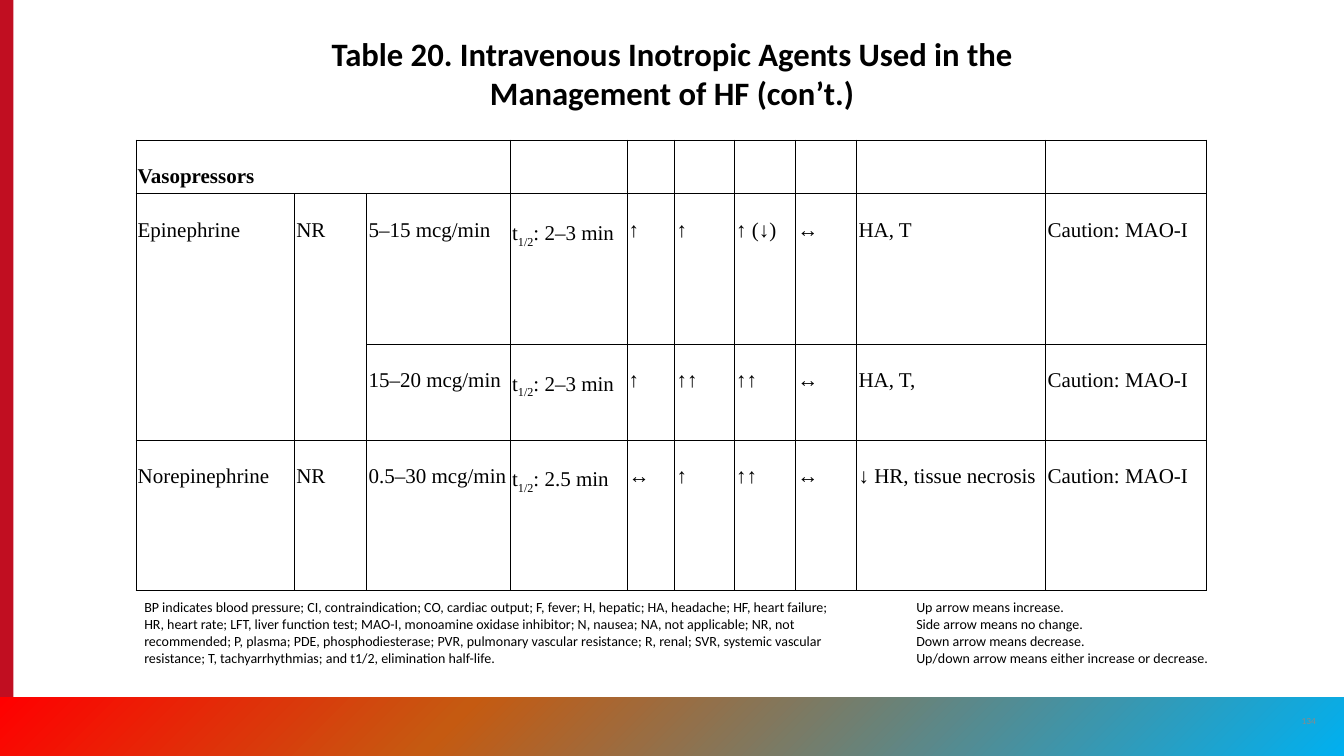
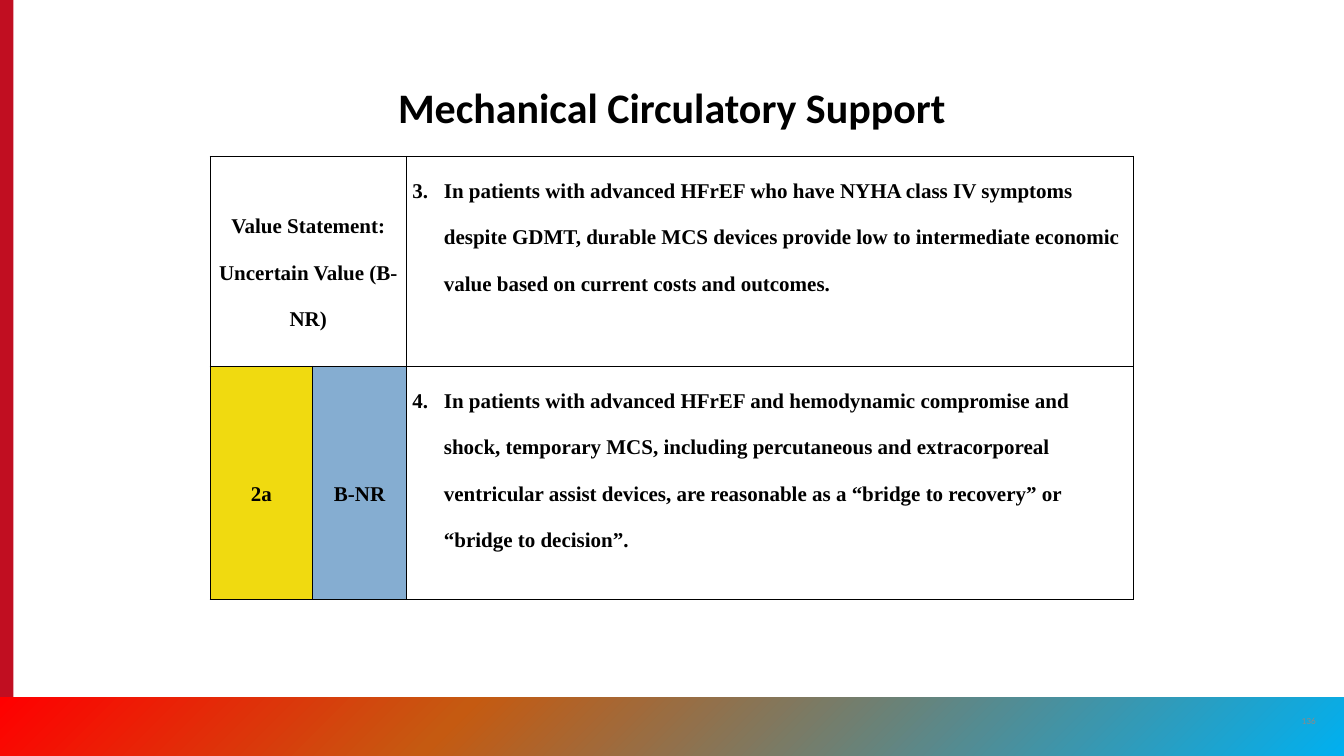
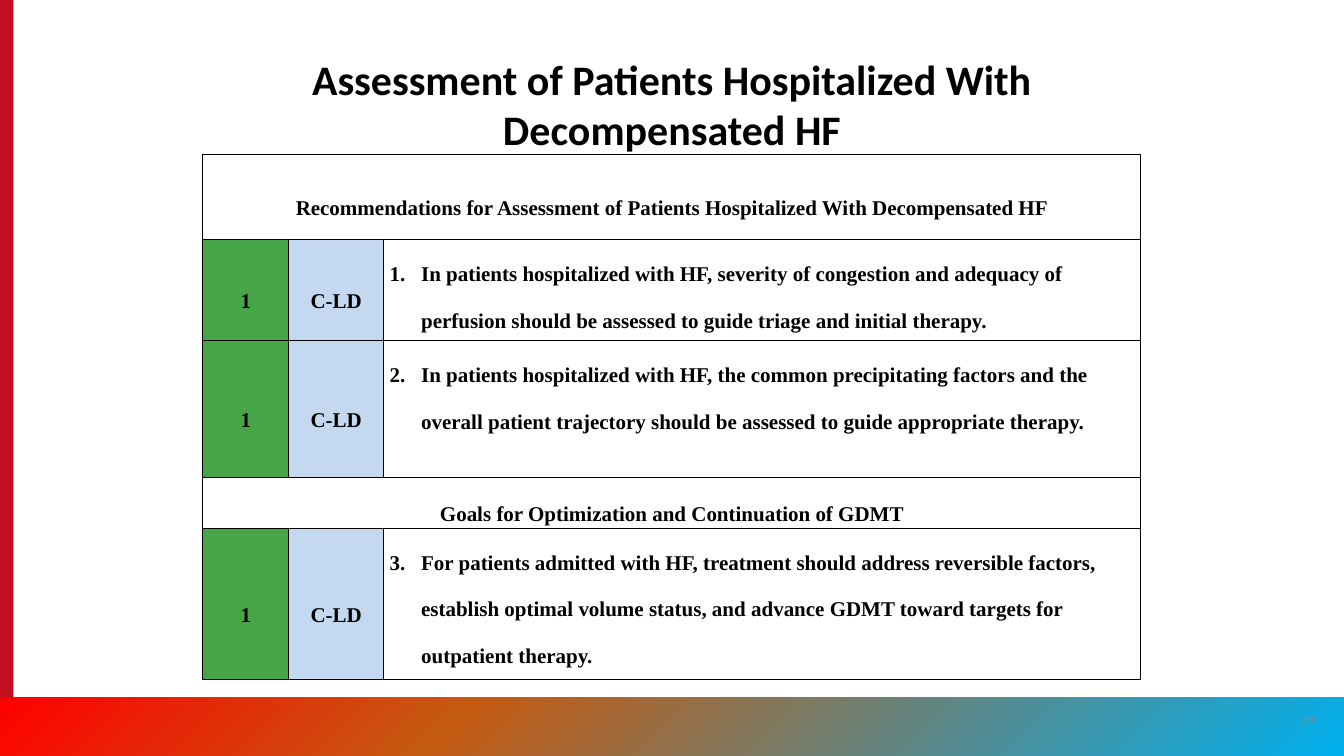
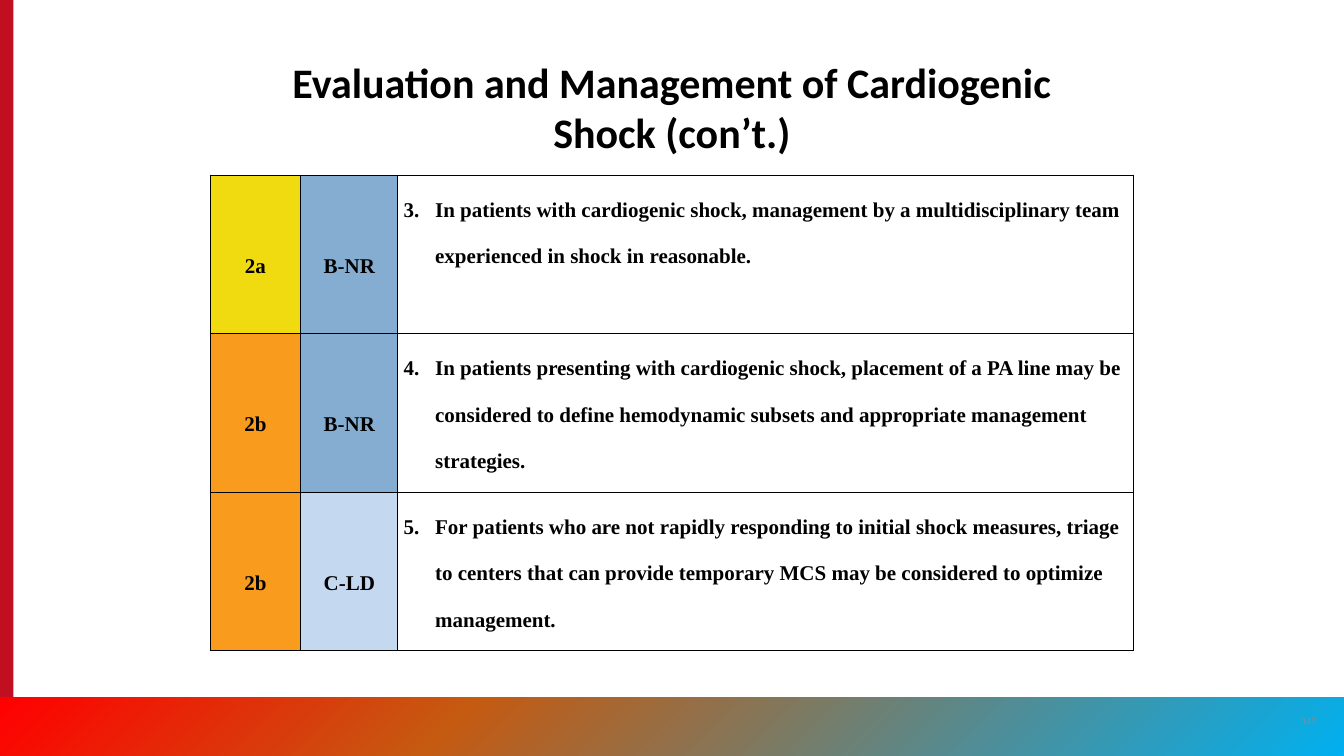
from copy import deepcopy

from lxml.etree import SubElement
from pptx import Presentation
from pptx.dml.color import RGBColor
from pptx.enum.shapes import MSO_SHAPE as Shape
from pptx.enum.text import MSO_ANCHOR as Anchor, MSO_AUTO_SIZE as AutoSize, PP_ALIGN as Align
from pptx.oxml.ns import qn
from pptx.util import Pt

COLORS = {
    "black": "000000",
    "red": "C10E21",
    "gray": "8A8B8A",
    "1": "45A547",
    "2a": "F0DA10",
    "2b": "F99B1C",
    "B-NR": "85ADD1",
    "C-LD": "C4D9F0",
}
BAND_STOPS = [(0, "00B0F0"), (0.66, "C55A11"), (1, "FF0000")]
WIDTH, HEIGHT, BAND_HEIGHT = 1152, 648, 50.4
HEADING_FONT, TABLE_FONT = "Calibri", "Times New Roman"

DRUG_ROWS = [
    ["Vasopressors"],
    ["Epinephrine", "NR", "5–15 mcg/min", "t|1/2|: 2–3 min", "↑", "↑", "↑ (↓)", "↔",
     "HA, T", "Caution: MAO-I"],
    ["", "", "15–20 mcg/min", "t|1/2|: 2–3 min", "↑", "↑↑", "↑↑", "↔",
     "HA, T,", "Caution: MAO-I"],
    ["Norepinephrine", "NR", "0.5–30 mcg/min", "t|1/2|: 2.5 min", "↔", "↑", "↑↑", "↔",
     "↓ HR, tissue necrosis", "Caution: MAO-I"],
]
ABBREVIATIONS = [
    "BP indicates blood pressure; CI, contraindication; CO, cardiac output; F, fever; "
    "H, hepatic; HA, headache; HF, heart failure; HR, heart rate; LFT, liver function test; "
    "MAO-I, monoamine oxidase inhibitor; N, nausea; NA, not applicable; NR, not recommended; "
    "P, plasma; PDE, phosphodiesterase; PVR, pulmonary vascular resistance; R, renal; "
    "SVR, systemic vascular resistance; T, tachyarrhythmias; and t1/2, elimination half-life."
]
ARROW_KEY = [
    "Up arrow means increase.",
    "Side arrow means no change.",
    "Down arrow means decrease.",
    "Up/down arrow means either increase or decrease.",
]
SUPPORT_ROWS = [
    ("Value Statement: Uncertain Value (B-NR)", None, 3,
     "In patients with advanced HFrEF who have NYHA class IV symptoms despite GDMT, durable "
     "MCS devices provide low to intermediate economic value based on current costs and "
     "outcomes."),
    ("2a", "B-NR", 4,
     "In patients with advanced HFrEF and hemodynamic compromise and shock, temporary MCS, "
     "including percutaneous and extracorporeal ventricular assist devices, are reasonable as "
     "a “bridge to recovery” or “bridge to decision”."),
]
ASSESSMENT_ROWS = [
    ("Recommendations for Assessment of Patients Hospitalized With Decompensated HF", 6),
    ("1", "C-LD", 1,
     "In patients hospitalized with HF, severity of congestion and adequacy of perfusion "
     "should be assessed to guide triage and initial therapy."),
    ("1", "C-LD", 2,
     "In patients hospitalized with HF, the common precipitating factors and the overall "
     "patient trajectory should be assessed to guide appropriate therapy."),
    ("Goals for Optimization and Continuation of GDMT", 0),
    ("1", "C-LD", 3,
     "For patients admitted with HF, treatment should address reversible factors, establish "
     "optimal volume status, and advance GDMT toward targets for outpatient therapy."),
]
SHOCK_ROWS = [
    ("2a", "B-NR", 3,
     "In patients with cardiogenic shock, management by a multidisciplinary team experienced "
     "in shock in reasonable."),
    ("2b", "B-NR", 4,
     "In patients presenting with cardiogenic shock, placement of a PA line may be considered "
     "to define hemodynamic subsets and appropriate management strategies."),
    ("2b", "C-LD", 5,
     "For patients who are not rapidly responding to initial shock measures, triage to centers "
     "that can provide temporary MCS may be considered to optimize management."),
]


def set_font(para, name, size, color="black", bold=False):
    font = para.font
    font.name, font.size, font.bold = name, Pt(size), bold
    font.color.rgb = RGBColor.from_string(COLORS[color])


def add_band(page, left, top, width, height):
    band = page.shapes.add_shape(Shape.RECTANGLE, Pt(left), Pt(top), Pt(width), Pt(height))
    band.shadow.inherit = False
    band.line.fill.background()
    return band


def add_shared_bands(page):
    layout = page.slide_layout
    for holder in list(layout.placeholders)[1:]:
        holder.element.getparent().remove(holder.element)
    side = add_band(page, 0, 0, 11.5, HEIGHT)
    side.fill.solid()
    side.fill.fore_color.rgb = RGBColor.from_string(COLORS["red"])
    foot = add_band(page, 0, HEIGHT - BAND_HEIGHT, WIDTH, BAND_HEIGHT)
    foot.rotation = 180
    foot.fill.gradient()
    foot.fill.gradient_angle = 315
    stop_list = foot.element.spPr.find(".//" + qn("a:gsLst"))
    stop_list.append(deepcopy(stop_list[0]))
    for stop, (position, color) in zip(foot.fill.gradient_stops, BAND_STOPS):
        stop.position = position
        stop.color.rgb = RGBColor.from_string(color)
    for band in (side, foot):
        layout.shapes.element.append(band.element)


def add_text(page, left, top, width, height, lines, size, color="black"):
    box = page.shapes.add_textbox(Pt(left), Pt(top), Pt(width), Pt(height))
    frame = box.text_frame
    frame.word_wrap = True
    frame.text = "\n".join(lines)
    for para in frame.paragraphs:
        set_font(para, HEADING_FONT, size, color)
    return frame


def add_title(page, text, top, width, height, size):
    title = page.shapes.title
    title.left, title.top = Pt((WIDTH - width) / 2), Pt(top)
    title.width, title.height = Pt(width), Pt(height)
    frame = title.text_frame
    frame.text = text
    frame.word_wrap = True
    frame.auto_size = AutoSize.NONE
    frame.vertical_anchor = Anchor.TOP
    para = frame.paragraphs[0]
    para.alignment = Align.CENTER
    set_font(para, HEADING_FONT, size, bold=True)


def add_page(deck, number, title, top, width, height, size=36):
    page = deck.slides.add_slide(deck.slide_layouts[5])
    add_title(page, title, top, width, height, size)
    frame = add_text(page, 1104.5, 600.5, 34.5, 34.5, [number], 8, "gray")
    frame.vertical_anchor = Anchor.MIDDLE
    frame.paragraphs[0].alignment = Align.CENTER
    return page


def add_borders(cell):
    properties = cell._tc.get_or_add_tcPr()
    for edge in ("a:lnL", "a:lnR", "a:lnT", "a:lnB"):
        line = SubElement(properties, qn(edge), w=str(Pt(1)))
        fill = SubElement(line, qn("a:solidFill"))
        SubElement(fill, qn("a:srgbClr"), val=COLORS["black"])


def add_grid(page, left, top, widths, heights, side_margin, end_margin):
    table = page.shapes.add_table(len(heights), len(widths), Pt(left), Pt(top),
                                  Pt(sum(widths)), Pt(sum(heights))).table
    table.first_row = table.horz_banding = False
    for column, width in zip(table.columns, widths):
        column.width = Pt(width)
    for row, height in zip(table.rows, heights):
        row.height = Pt(height)
    for cell in table.iter_cells():
        cell.margin_left = cell.margin_right = Pt(side_margin)
        cell.margin_top = cell.margin_bottom = Pt(end_margin)
        add_borders(cell)
        cell.fill.background()
    return table


def add_number(para, start):
    properties = para._p.get_or_add_pPr()
    properties.set("marL", str(Pt(27)))
    properties.set("indent", str(Pt(-27)))
    SubElement(properties, qn("a:buAutoNum"), type="arabicPeriod", startAt=str(start))
    tabs = SubElement(properties, qn("a:tabLst"))
    SubElement(tabs, qn("a:tab"), pos=str(Pt(18)), algn="l")


def write_cell(cell, text, bold=True, after=0, number=None):
    para = cell.text_frame.paragraphs[0]
    para.line_spacing = 2.0
    para.space_after = Pt(after)
    if number:
        add_number(para, number)
    for index, part in enumerate(text.split("|")):
        span = para.add_run()
        span.text = part
        if index % 2:
            span.font._element.set("baseline", "-25000")
    set_font(para, TABLE_FONT, 18, bold=bold)


def write_label(cell, text, after=0):
    write_cell(cell, text, after=after)
    cell.text_frame.paragraphs[0].alignment = Align.CENTER
    cell.vertical_anchor = Anchor.MIDDLE
    if text in COLORS:
        cell.fill.solid()
        cell.fill.fore_color.rgb = RGBColor.from_string(COLORS[text])


def add_drug_table(page):
    widths = [136, 62, 123, 100, 41, 51, 52.5, 52.5, 162, 138]
    table = add_grid(page, 116.6, 120.2, widths, [39, 129, 82, 129], 1.4, 1.4)
    table.cell(0, 0).merge(table.cell(0, 2))
    for column in (0, 1):
        table.cell(1, column).merge(table.cell(2, column))
    for row, texts in enumerate(DRUG_ROWS):
        for column, text in enumerate(texts):
            if text:
                write_cell(table.cell(row, column), text, bold=row == 0, after=6)


def add_recommendations(page, left, top, widths, heights, rows):
    table = add_grid(page, left, top, widths, heights, 5, 0)
    for row, content in enumerate(rows):
        first, second, third = (table.cell(row, column) for column in range(3))
        if len(content) == 2:
            first.merge(third)
            write_label(first, *content)
            continue
        grade, evidence, number, text = content
        write_label(first, grade)
        if evidence:
            write_label(second, evidence)
        else:
            first.merge(second)
        write_cell(third, text, number=number)


def main():
    deck = Presentation()
    deck.slide_width, deck.slide_height = Pt(WIDTH), Pt(HEIGHT)

    page = add_page(deck, "134", "Table 20. Intravenous Inotropic Agents Used in the "
                    "Management of HF (con’t.)", 25.2, 608, 66, 28)
    add_shared_bands(page)
    add_drug_table(page)
    add_text(page, 116.6, 509.8, 618, 80, ABBREVIATIONS, 12)
    add_text(page, 778.3, 509.8, 324, 65.5, ARROW_KEY, 12)

    page = add_page(deck, "136", "Mechanical Circulatory Support", 66.5, 580, 53)
    add_recommendations(page, 180, 134, [88, 80.5, 623.5], [180, 199.5], SUPPORT_ROWS)

    page = add_page(deck, "139", "Assessment of Patients Hospitalized With Decompensated HF",
                    42, 667, 90)
    add_recommendations(page, 174, 132, [73.5, 81.5, 649],
                        [73.5, 81.5, 117.5, 37.5, 117.5], ASSESSMENT_ROWS)

    page = add_page(deck, "147", "Evaluation and Management of Cardiogenic Shock (con’t.)",
                    44.8, 667, 90)
    add_recommendations(page, 180, 150, [78, 83, 631], [136] * 3, SHOCK_ROWS)

    deck.save("out.pptx")


if __name__ == "__main__":
    main()
